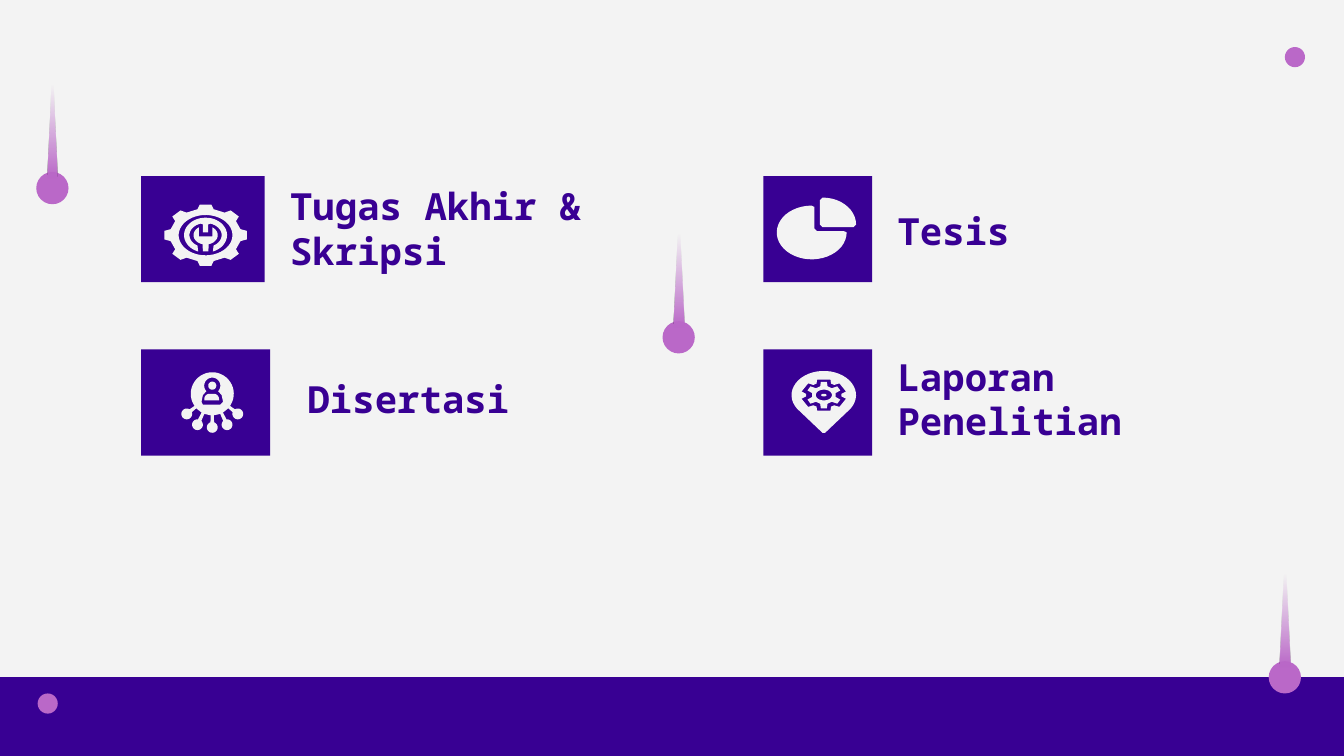
import copy
import dataclasses
import math

import lxml.etree
import pptx
import pptx.dml.color
import pptx.enum.shapes
import pptx.enum.text
import pptx.oxml.ns
import pptx.util

Inches = pptx.util.Inches
RGB = pptx.dml.color.RGBColor
SHAPES = pptx.enum.shapes.MSO_SHAPE
qn = pptx.oxml.ns.qn


@dataclasses.dataclass(frozen=True)
class Theme:
    background: RGB = RGB.from_string("F3F3F3")
    primary: RGB = RGB.from_string("380093")
    accent: RGB = RGB.from_string("BA68C8")
    font: str = "Noto Sans Mono"
    label_size: int = 20


THEME = Theme()


def paint(shape, color):
    shape.shadow.inherit = False
    shape.fill.solid()
    shape.fill.fore_color.rgb = color
    shape.line.fill.background()
    return shape


def add_block(slide, kind, left, top, width, height, color):
    block = slide.shapes.add_shape(
        kind, Inches(left), Inches(top), Inches(width), Inches(height)
    )
    return paint(block, color)


def add_label(slide, text, left, top, width):
    label = slide.shapes.add_textbox(
        Inches(left), Inches(top), Inches(width), Inches(0.41)
    )
    frame = label.text_frame
    frame.word_wrap = True
    frame.vertical_anchor = pptx.enum.text.MSO_ANCHOR.MIDDLE
    frame.margin_left = frame.margin_right = Inches(0.1)
    frame.margin_top = frame.margin_bottom = Inches(0.1)
    paragraph = frame.paragraphs[0]
    paragraph.text = text
    paragraph.font.name = THEME.font
    paragraph.font.size = pptx.util.Pt(THEME.label_size)
    paragraph.font.bold = True
    paragraph.font.color.rgb = THEME.primary


def add_drop(slide, left, top):
    add_block(slide, SHAPES.OVAL, left, top + 0.82, 0.24, 0.24, THEME.accent)
    tail = add_block(
        slide, SHAPES.ISOSCELES_TRIANGLE, left + 0.08, top, 0.08, 0.87, THEME.accent
    )
    tail.fill.gradient()
    tail.fill.gradient_angle = 90
    for stop, position in zip(tail.fill.gradient_stops, (0, 0.8)):
        stop.position = position
        stop.color.rgb = THEME.accent
    faded = tail._element.spPr.findall(".//" + qn("a:gs"))[-1]
    lxml.etree.SubElement(faded[0], qn("a:alpha"), val="0")
    end = copy.deepcopy(faded)
    end.set("pos", "100000")
    faded.addnext(end)


def arc(center, rx, ry, start=0, end=360):
    steps = max(2, round(abs(end - start) / 8))
    angles = [math.radians(start + (end - start) * i / steps) for i in range(steps + 1)]
    return [(center[0] + rx * math.cos(a), center[1] + ry * math.sin(a)) for a in angles]


def gear(center, rx, ry, teeth, root, tip_half, root_half):
    points = []
    for tooth in range(teeth):
        middle = 270 + tooth * 360 / teeth
        for offset, reach in (
            (-root_half, root), (-tip_half, 1), (tip_half, 1), (root_half, root)
        ):
            angle = math.radians(middle + offset)
            points.append((
                center[0] + rx * reach * math.cos(angle),
                center[1] + ry * reach * math.sin(angle),
            ))
    return points


def add_outline(slide, *contours):
    builder = None
    for contour in contours:
        points = [(Inches(x), Inches(y)) for x, y in contour]
        if builder is None:
            builder = slide.shapes.build_freeform(*points[0])
        else:
            builder.move_to(*points[0])
        builder.add_line_segments(points[1:], close=True)
    paint(builder.convert_to_shape(), THEME.background)


def add_wrench_icon(slide):
    hub = (1.53, 1.75)
    add_outline(
        slide,
        arc(hub, 0.09, 0.07, 236, 105) + [(1.51, 1.87), (1.55, 1.87)]
        + arc(hub, 0.09, 0.07, 75, -56) + [(1.58, 1.76), (1.48, 1.76)],
    )
    add_outline(
        slide,
        arc(hub, 0.16, 0.13, 110, 430) + arc(hub, 0.12, 0.09, 60, -72)
        + [(1.55, 1.67), (1.55, 1.73), (1.51, 1.73), (1.51, 1.67)]
        + arc(hub, 0.12, 0.09, 252, 120),
    )
    add_outline(slide, gear(hub, 0.31, 0.23, 8, 0.86, 8, 13), arc(hub, 0.2, 0.15))


def add_network_icon(slide):
    center = (1.58, 2.93)
    head = (1.58, 2.87)
    add_outline(slide, arc(head, 0.03, 0.03))
    add_outline(
        slide, arc((1.56, 2.97), 0.04, 0.04, 180, 270)
        + arc((1.59, 2.97), 0.04, 0.04, 270, 360) + [(1.63, 2.98), (1.52, 2.98)],
    )
    network = []
    for dx, dy in ((0.19, 0.15), (0.11, 0.23), (0, 0.25), (-0.11, 0.23), (-0.19, 0.15)):
        angle = math.degrees(math.atan2(dy, dx))
        node = (center[0] + dx, center[1] + dy)
        network += arc(center, 0.16, 0.16, angle - 7, angle - 4)
        network += arc(node, 0.04, 0.04, angle + 200, angle + 520)
        network += arc(center, 0.16, 0.16, angle + 4, angle + 7)
    network += arc(center, 0.16, 0.16, 150, 390)
    person = arc(head, 0.06, 0.06, 137, 403) + [
        (1.65, 2.94), (1.66, 2.99), (1.64, 3.01), (1.51, 3.01), (1.5, 2.99), (1.51, 2.94)
    ]
    add_outline(slide, network, person)


def add_pie_icon(slide):
    add_outline(
        slide,
        arc((6.04, 1.73), 0.26, 0.2, 0, 270)
        + [(6.06, 1.54), (6.06, 1.7), (6.08, 1.72), (6.28, 1.72)],
    )
    add_outline(
        slide,
        arc((6.12, 1.67), 0.25, 0.2, 270, 360)
        + [(6.35, 1.69), (6.12, 1.69), (6.1, 1.67), (6.1, 1.49)],
    )


def add_pin_icon(slide):
    hub = (6.13, 2.94)
    add_outline(slide, gear(hub, 0.13, 0.1, 6, 0.68, 10, 18), arc(hub, 0.06, 0.04))
    add_outline(
        slide,
        arc(hub, 0.24, 0.18, 146, 394) + [(6.14, 3.22), (6.12, 3.22)],
        gear(hub, 0.17, 0.12, 6, 0.78, 17, 24),
    )
    add_outline(slide, arc(hub, 0.02, 0.01))


def main():
    deck = pptx.Presentation()
    deck.slide_width = Inches(10)
    deck.slide_height = deck.slide_width * 9 // 16
    slide = deck.slides.add_slide(deck.slide_layouts[6])
    slide.background.fill.solid()
    slide.background.fill.fore_color.rgb = THEME.background

    footer = add_block(slide, SHAPES.RECTANGLE, 0, 5.04, 10, 0.59, THEME.primary)
    footer.line.color.rgb = THEME.primary
    footer.line.width = pptx.util.Pt(0.75)

    for left, top in ((9.44, 4.1), (0.27, 0.46), (4.93, 1.57)):
        add_drop(slide, left, top)
    for left, top in ((9.56, 0.35), (0.28, 5.16)):
        add_block(slide, SHAPES.OVAL, left, top, 0.15, 0.15, THEME.accent)

    works = (
        ("Tugas Akhir & Skripsi", 1.05, 1.31, 0.92, 2.06, 1.49, 2.46, add_wrench_icon),
        ("Tesis", 5.68, 1.31, 0.81, 6.58, 1.51, 2.46, add_pie_icon),
        ("Disertasi", 1.05, 2.6, 0.96, 2.19, 2.76, 2.46, add_network_icon),
        ("Laporan Penelitian", 5.68, 2.6, 0.81, 6.58, 2.76, 2.99, add_pin_icon),
    )
    for text, left, top, width, label_left, label_top, label_width, add_icon in works:
        add_block(slide, SHAPES.RECTANGLE, left, top, width, 0.79, THEME.primary)
        add_label(slide, text, label_left, label_top, label_width)
        add_icon(slide)

    deck.save("out.pptx")


if __name__ == "__main__":
    main()
